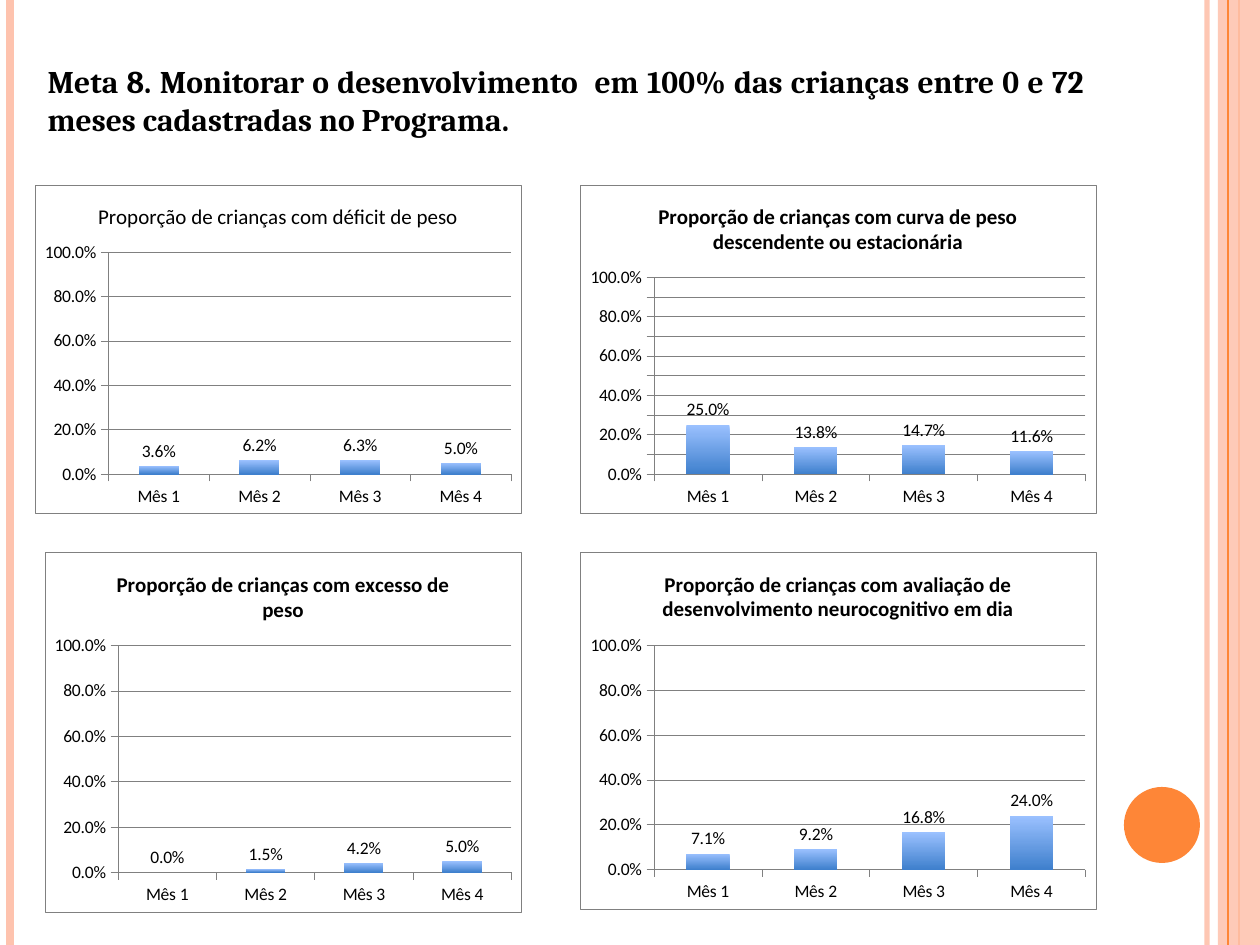
from dataclasses import dataclass
from typing import Optional

from lxml import etree
from pptx import Presentation
from pptx import util as u
from pptx.chart import data as chart_data
from pptx.dml import color
from pptx.enum import chart as charts, shapes, text
from pptx.oxml import parse_xml
from pptx.oxml.ns import nsdecls, qn

PX = 914400 / 126
ORANGE, PEACH, GREY, WHITE, BLACK = "FE8637", "FEC3AE", "808080", "FFFFFF", "000000"
SKY, BLUE = "9BC1FF", "3F80CD"
MONTHS = ["Mês 1", "Mês 2", "Mês 3", "Mês 4"]
GOAL = ("Meta 8. Monitorar o desenvolvimento  em 100% das crianças entre "
        "0 e 72 meses cadastradas no Programa.")


@dataclass
class Stripe:
    x: int
    weight: float
    hue: str
    opacity: int = 100


@dataclass
class Indicator:
    caption: str
    box: tuple[int, int, int, int]
    rates: tuple[float, ...]
    bold: bool = True
    step: Optional[float] = 0.2


STRIPES = [
    Stripe(1207, 3, PEACH, 93),
    Stripe(10, 4.5, PEACH),
    Stripe(1239, 1.5, ORANGE),
    Stripe(1228, 0.75, ORANGE),
]
INDICATORS = [
    Indicator("Proporção de crianças com déficit de peso",
              (35, 185, 486, 328), (0.036, 0.062, 0.063, 0.05), bold=False),
    Indicator("Proporção de crianças com excesso de peso",
              (45, 552, 476, 360), (0, 0.015, 0.042, 0.05)),
    Indicator("Proporção de crianças com curva de peso descendente ou estacionária",
              (580, 185, 516, 328), (0.25, 0.138, 0.147, 0.116), step=None),
    Indicator("Proporção de crianças com avaliação de desenvolvimento neurocognitivo em dia",
              (580, 552, 516, 357), (0.071, 0.092, 0.168, 0.24)),
]


def px(length: int) -> u.Emu:
    return u.Emu(round(length * PX))


def rgb(value: str) -> color.RGBColor:
    return color.RGBColor.from_string(value)


def set_font(font, size: float, bold: bool = False, face: str = "Calibri") -> None:
    font.size = u.Pt(size)
    font.bold = bold
    font.name = face
    font.color.rgb = rgb(BLACK)


def set_line(line, hue: str, weight: float) -> None:
    line.color.rgb = rgb(hue)
    line.width = u.Pt(weight)


def set_opacity(shape, percent: int) -> None:
    for hue in shape._element.spPr.iter(qn("a:srgbClr")):
        etree.SubElement(hue, qn("a:alpha")).set("val", str(percent * 1000))


def draw_stripe(slide, stripe: Stripe) -> None:
    rule = slide.shapes.add_connector(
        shapes.MSO_CONNECTOR.STRAIGHT, px(stripe.x), 0, px(stripe.x), px(945))
    set_line(rule.line, stripe.hue, stripe.weight)
    if stripe.opacity < 100:
        set_opacity(rule, stripe.opacity)
    etree.SubElement(rule._element.spPr, qn("a:effectLst"))


def draw_block(slide, kind, box: tuple[int, int, int, int], hue: str, opacity: int = 100) -> None:
    block = slide.shapes.add_shape(kind, *map(px, box))
    block.shadow.inherit = False
    block.fill.solid()
    block.fill.fore_color.rgb = rgb(hue)
    block.line.fill.background()
    if opacity < 100:
        set_opacity(block, opacity)


def write_goal(slide) -> None:
    goal = slide.shapes.title
    goal.left, goal.top, goal.width, goal.height = map(px, (35, 55, 1062, 90))
    goal.text_frame.word_wrap = True
    goal.text_frame.auto_size = text.MSO_AUTO_SIZE.SHAPE_TO_FIT_TEXT
    goal.text_frame.vertical_anchor = text.MSO_ANCHOR.MIDDLE
    sentence = goal.text_frame.paragraphs[0]
    sentence.alignment = text.PP_ALIGN.JUSTIFY
    run = sentence.add_run()
    run.text = GOAL
    set_font(run.font, 18, True, "Cambria")


def frame_chart(chart) -> None:
    white = f'<a:solidFill><a:srgbClr val="{WHITE}"/></a:solidFill>'
    border = f'<a:ln w="3175"><a:solidFill><a:srgbClr val="{GREY}"/></a:solidFill></a:ln>'
    opening = f'<c:spPr {nsdecls("c", "a")}>'
    body = chart._chartSpace.find(qn("c:chart"))
    body.addnext(parse_xml(f"{opening}{white}{border}</c:spPr>"))
    body.find(qn("c:plotArea")).append(parse_xml(f"{opening}{white}</c:spPr>"))


def draw_indicator(slide, indicator: Indicator) -> None:
    figures = chart_data.CategoryChartData(number_format="0.0%")
    figures.categories = MONTHS
    figures.add_series(indicator.caption, indicator.rates)
    chart = slide.shapes.add_chart(
        charts.XL_CHART_TYPE.COLUMN_CLUSTERED, *map(px, indicator.box), figures).chart
    set_font(chart.font, 10)
    chart.has_legend = False
    chart.has_title = True
    caption = chart.chart_title.text_frame.paragraphs[0].add_run()
    caption.text = indicator.caption
    set_font(caption.font, 12, indicator.bold)
    chart.chart_title.include_in_layout = False

    for axis in (chart.category_axis, chart.value_axis):
        axis.major_tick_mark = charts.XL_TICK_MARK.OUTSIDE
        axis.minor_tick_mark = charts.XL_TICK_MARK.NONE
        set_font(axis.tick_labels.font, 10)
        set_line(axis.format.line, GREY, 0.25)
    rate_axis = chart.value_axis
    rate_axis.maximum_scale = 1
    rate_axis.major_unit = indicator.step
    rate_axis.has_major_gridlines = True
    set_line(rate_axis.major_gridlines.format.line, GREY, 0.25)
    rate_axis.tick_labels.number_format = "0.0%"
    rate_axis.tick_labels.number_format_is_linked = False

    plot = chart.plots[0]
    plot.gap_width = 150
    plot.vary_by_categories = False
    bars = plot.series[0]
    bars.invert_if_negative = False
    bars.format.fill.gradient()
    bars.format.fill.gradient_angle = 270
    for stop, hue in zip(bars.format.fill.gradient_stops, (SKY, BLUE)):
        stop.color.rgb = rgb(hue)
    labels = bars.data_labels
    labels.show_value = True
    labels.number_format = "0.0%"
    labels.number_format_is_linked = False
    labels.position = charts.XL_LABEL_POSITION.OUTSIDE_END
    set_font(labels.font, 10)
    frame_chart(chart)


def main() -> None:
    deck = Presentation()
    deck.slide_width, deck.slide_height = px(1260), px(945)
    slide = deck.slides.add_slide(deck.slide_layouts[5])
    for stripe in STRIPES[:3]:
        draw_stripe(slide, stripe)
    draw_block(slide, shapes.MSO_SHAPE.RECTANGLE, (1218, 0, 42, 945), PEACH, 87)
    draw_stripe(slide, STRIPES[3])
    draw_block(slide, shapes.MSO_SHAPE.OVAL, (1124, 787, 76, 76), ORANGE)
    write_goal(slide)
    for indicator in INDICATORS:
        draw_indicator(slide, indicator)
    deck.save("out.pptx")


if __name__ == "__main__":
    main()
